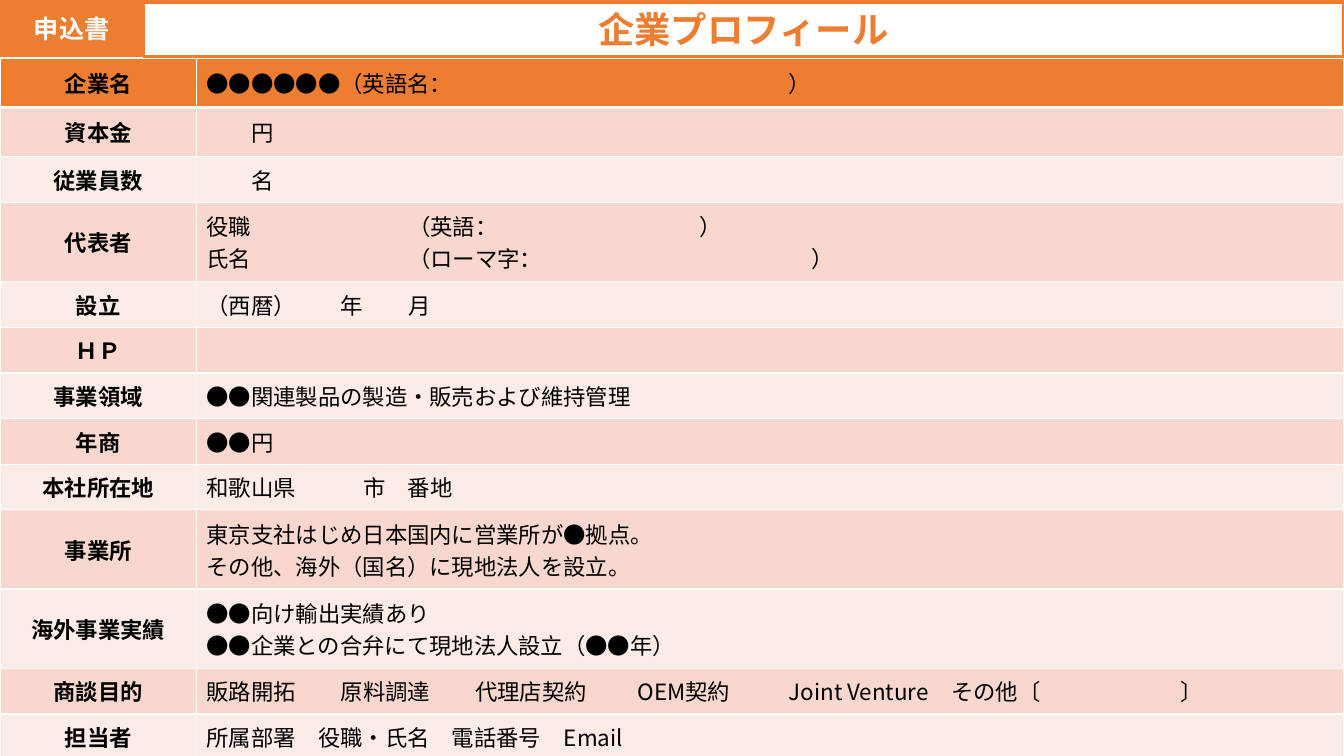
from lxml.etree import SubElement
from pptx import Presentation
from pptx.dml.color import RGBColor
from pptx.enum.shapes import MSO_SHAPE as Shape
from pptx.enum.text import MSO_ANCHOR as Anchor, MSO_AUTO_SIZE as Auto, PP_ALIGN as Align
from pptx.oxml.ns import qn
from pptx.util import Cm, Pt

ORANGE = RGBColor(0xED, 0x7D, 0x31)
PEACH = RGBColor(0xF8, 0xD7, 0xCE)
PALE = RGBColor(0xFC, 0xEC, 0xE8)
WHITE = RGBColor(0xFF, 0xFF, 0xFF)
BLACK = RGBColor(0, 0, 0)
NOTO = "Noto Sans CJK JP"
LATIN = "Calibri"
SIZE = 16
EM = SIZE / 72 * 2.54
WIDE, HIGH = 33.87, 19.05
HEAD, LINE, PAIR = 1.24, 1.15, 2.0

# Each row: label, label font, height, lines; a line is text and tab stops in ems.
ROWS = [
    ("企業名", LATIN, HEAD, [("●●●●●●（英語名：\t）", [26])]),
    ("資本金", NOTO, HEAD, [("\t円", [2])]),
    ("従業員数", NOTO, LINE, [("\t名", [2])]),
    ("代表者", NOTO, PAIR, [("役職\t（英語：\t）", [9, 22]),
                         ("氏名\t（ローマ字：\t）", [9, 27])]),
    ("設立", NOTO, LINE, [("（西暦）\t年\t月", [6, 9])]),
    ("ＨＰ", LATIN, LINE, []),
    ("事業領域", NOTO, LINE, [("●●関連製品の製造・販売および維持管理", [])]),
    ("年商", LATIN, LINE, [("●●円", [])]),
    ("本社所在地", NOTO, LINE, [("和歌山県\t市　番地", [7])]),
    ("事業所", NOTO, PAIR, [("東京支社はじめ日本国内に営業所が●拠点。", []),
                         ("その他、海外（国名）に現地法人を設立。", [])]),
    ("海外事業実績", NOTO, PAIR, [("●●向け輸出実績あり", []),
                             ("●●企業との合弁にて現地法人設立（●●年）", [])]),
    ("商談目的", NOTO, LINE, [("販路開拓\t原料調達\t代理店契約\tOEM契約\tJoint Venture　その他〔\t〕",
                          [6, 12, 19.25, 26, 43.5])]),
    ("担当者", NOTO, LINE, [("所属部署　役職・氏名　電話番号　Email", [])]),
]


def write(para, text, size=SIZE, face=NOTO, color=BLACK, bold=False,
          align=Align.LEFT, stops=()):
    if stops:
        tabs = SubElement(para._p.get_or_add_pPr(), qn("a:tabLst"))
        for stop in stops:
            SubElement(tabs, qn("a:tab"), pos=str(Cm(stop * EM)), algn="l")
    para.alignment = align
    run = para.add_run()
    run.text = text
    font = run.font
    font.name, font.size, font.bold = face, Pt(size), bold
    font.color.rgb = color
    SubElement(run._r.get_or_add_rPr(), qn("a:ea"), typeface=NOTO)


class Form:
    def __init__(self, deck):
        self.slide = deck.slides.add_slide(deck.slide_layouts[5])

    def place(self, shape, left, top, width, height, line):
        shape.left, shape.top = Cm(left), Cm(top)
        shape.width, shape.height = Cm(width), Cm(height)
        shape.line.color.rgb = ORANGE
        shape.line.width = Pt(line)
        frame = shape.text_frame
        frame.auto_size = Auto.NONE
        frame.word_wrap = True
        frame.vertical_anchor = Anchor.MIDDLE
        frame.margin_top = frame.margin_bottom = 0
        return frame.paragraphs[0]

    def title(self, text, *box):
        para = self.place(self.slide.shapes.title, *box, line=2.25)
        para.line_spacing = 1.0
        write(para, text, size=26, color=ORANGE, bold=True, align=Align.CENTER)

    def tag(self, text, *box):
        shape = self.slide.shapes.add_shape(Shape.RECTANGLE, 0, 0, 0, 0)
        shape.shadow.inherit = False
        shape.fill.solid()
        shape.fill.fore_color.rgb = ORANGE
        para = self.place(shape, *box, line=1)
        write(para, text, size=18, face=LATIN, color=WHITE, bold=True, align=Align.CENTER)

    def edge(self, cell, side, width):
        line = SubElement(cell._tc.get_or_add_tcPr(), qn("a:" + side), w=str(Pt(width)))
        fill = SubElement(line, qn("a:solidFill"))
        SubElement(fill, qn("a:srgbClr"), val=str(WHITE))

    def cell(self, cell, row, fill):
        thick = {(0, "lnB"), (1, "lnT")}
        for side in ("lnL", "lnR", "lnT", "lnB"):
            self.edge(cell, side, 3 if (row, side) in thick else 1)
        cell.fill.solid()
        cell.fill.fore_color.rgb = fill
        cell.vertical_anchor = Anchor.MIDDLE
        return cell.text_frame

    def table(self, rows, top, widths):
        high = sum(row[2] for row in rows)
        grid = self.slide.shapes.add_table(
            len(rows), 2, 0, Cm(top), Cm(sum(widths)), Cm(high)).table
        grid.first_row = grid.horz_banding = False
        for col, width in zip(grid.columns, widths):
            col.width = Cm(width)
        for i, (label, face, height, lines) in enumerate(rows):
            grid.rows[i].height = Cm(height)
            fill = ORANGE if i == 0 else PEACH if i % 2 else PALE
            name = self.cell(grid.cell(i, 0), i, fill)
            write(name.paragraphs[0], label, face=face, bold=True, align=Align.CENTER)
            body = self.cell(grid.cell(i, 1), i, fill)
            for j, (text, stops) in enumerate(lines):
                para = body.add_paragraph() if j else body.paragraphs[0]
                write(para, text, stops=stops)


def main():
    deck = Presentation()
    deck.slide_width, deck.slide_height = Cm(WIDE), Cm(HIGH)
    form = Form(deck)
    side = 3.61
    form.title("企業プロフィール", side, 0.05, WIDE - side, 1.37)
    form.tag("申込書", 0, 0, side, 1.42)
    form.table(ROWS, 1.47, (4.95, 28.92))
    deck.save("out.pptx")


if __name__ == "__main__":
    main()
